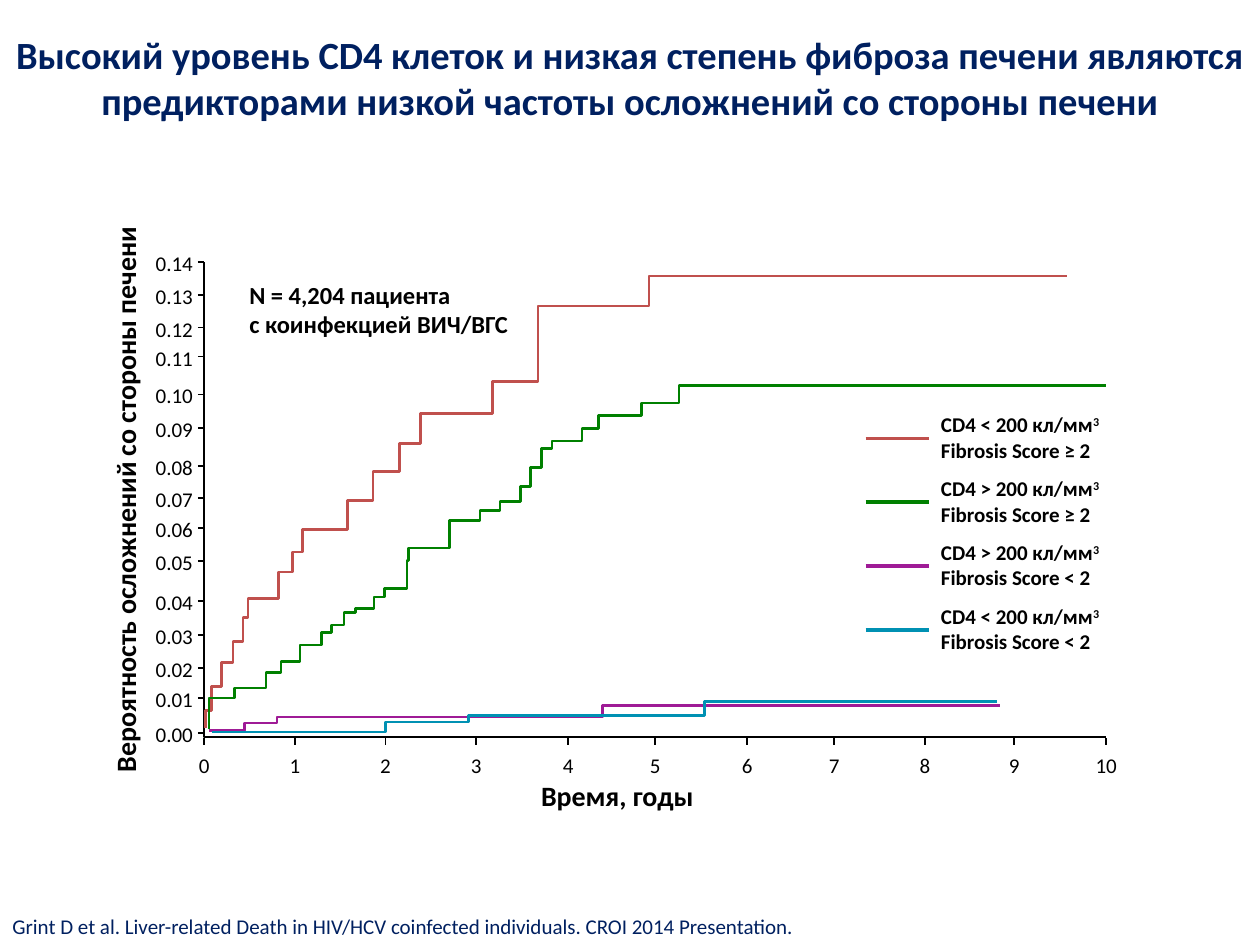
import pptx
import pptx.dml.color
import pptx.enum.shapes
import pptx.enum.text
import pptx.util
from lxml import etree
from pptx.oxml.ns import qn

Inches = pptx.util.Inches
ALIGN = pptx.enum.text.PP_ALIGN
ANCHOR = pptx.enum.text.MSO_ANCHOR
AUTO_SIZE = pptx.enum.text.MSO_AUTO_SIZE

COLORS = {
    "navy": "002060",
    "black": "000000",
    "red": "C0504D",
    "green": "008000",
    "purple": "9F1B96",
    "teal": "0091B3",
}

LEGEND = [
    ("red", "CD4 < 200 кл/мм", "Fibrosis Score ≥ 2"),
    ("green", "CD4 > 200 кл/мм", "Fibrosis Score ≥ 2"),
    ("purple", "CD4 > 200 кл/мм", "Fibrosis Score < 2"),
    ("teal", "CD4 < 200 кл/мм", "Fibrosis Score < 2"),
]

# Inches to the right of and above the axis origin
YEAR_TICKS = [0, 0.72, 1.44, 2.16, 2.89, 3.58, 4.31, 5, 5.72, 6.43, 7.16]
PROBABILITY_TICKS = [0.03, 0.31, 0.55, 0.81, 1.08, 1.4, 1.66, 1.9, 2.15,
                     2.45, 2.72, 3.02, 3.25, 3.51, 3.77]
CURVES = {
    "red": ((0.01, 0.07), [
        (0.01, 0.21), (0.06, 0.4), (0.14, 0.59), (0.23, 0.76), (0.31, 0.95),
        (0.35, 1.1), (0.59, 1.31), (0.7, 1.47), (0.78, 1.65), (1.14, 1.88),
        (1.34, 2.11), (1.55, 2.33), (1.72, 2.57), (2.29, 2.82), (2.65, 3.42),
        (3.53, 3.66)], 6.85),
    "green": ((0.04, 0.06), [
        (0.04, 0.31), (0.24, 0.39), (0.49, 0.51), (0.61, 0.6), (0.76, 0.73),
        (0.93, 0.83), (1.01, 0.89), (1.11, 0.99), (1.2, 1.02), (1.35, 1.11),
        (1.43, 1.18), (1.61, 1.4), (1.62, 1.5), (1.95, 1.72), (2.19, 1.8),
        (2.35, 1.87), (2.51, 1.99), (2.59, 2.14), (2.68, 2.29), (2.76, 2.35),
        (3, 2.45), (3.13, 2.55), (3.47, 2.65), (3.77, 2.79)], 7.16),
    "purple": ((0.04, 0.05), [(0.32, 0.11), (0.58, 0.16), (3.16, 0.25)], 6.32),
    "teal": ((0.06, 0.04), [(1.44, 0.12), (2.1, 0.17), (3.97, 0.28)], 6.29),
}


def rgb(color):
    return pptx.dml.color.RGBColor.from_string(COLORS[color])


def style(paragraph, size, color="black", bold=False, align=ALIGN.LEFT):
    paragraph.alignment = align
    paragraph.font.name = "Calibri"
    paragraph.font.size = pptx.util.Pt(size)
    paragraph.font.bold = bold
    paragraph.font.color.rgb = rgb(color)


def add_label(slide, box, lines, size, bold=False, align=ALIGN.LEFT):
    label = slide.shapes.add_textbox(*map(Inches, box))
    frame = label.text_frame
    frame.word_wrap = False
    frame.auto_size = AUTO_SIZE.SHAPE_TO_FIT_TEXT
    frame.text = "\n".join(lines)
    for paragraph in frame.paragraphs:
        style(paragraph, size, bold=bold, align=align)
    return label


def add_line(slide, start, end, color, width):
    line = slide.shapes.add_connector(
        pptx.enum.shapes.MSO_CONNECTOR.STRAIGHT, *map(Inches, start + end))
    line.line.color.rgb = rgb(color)
    line.line.width = pptx.util.Pt(width)
    etree.SubElement(line._element.spPr, qn("a:effectLst"))


def add_path(slide, points, color, width):
    corners = [(Inches(x), Inches(y)) for x, y in points]
    builder = slide.shapes.build_freeform(*corners[0])
    builder.add_line_segments(corners[1:], close=False)
    path = builder.convert_to_shape()
    path.fill.background()
    path.line.color.rgb = rgb(color)
    path.line.width = pptx.util.Pt(width)
    path.shadow.inherit = False


def add_title(slide, left, top, width, height):
    title = slide.shapes.title
    title.left, title.top = Inches(left), Inches(top)
    title.width, title.height = Inches(width), Inches(height)
    frame = title.text_frame
    frame.text = ("Высокий уровень CD4 клеток и низкая степень фиброза печени "
                  "являются предикторами низкой частоты осложнений "
                  "со стороны печени")
    frame.word_wrap = True
    frame.auto_size = AUTO_SIZE.NONE
    frame.vertical_anchor = ANCHOR.MIDDLE
    style(frame.paragraphs[0], 22, "navy", True, ALIGN.CENTER)


def add_citation(slide, left, top, width, height):
    citation = slide.shapes.add_textbox(*map(Inches, (left, top, width, height)))
    frame = citation.text_frame
    frame.word_wrap = True
    frame.vertical_anchor = ANCHOR.BOTTOM
    frame.text = ("Grint D et al. Liver-related Death in HIV/HCV coinfected "
                  "individuals. CROI 2014 Presentation.")
    style(frame.paragraphs[0], 12, "navy")


def add_legend(slide, left, top, width, height):
    row_height = height / len(LEGEND)
    key_width = 0.5
    for row, (color, cells, score) in enumerate(LEGEND):
        row_top = top + row * row_height
        key_y = row_top + 0.26
        add_line(slide, (left, key_y), (left + key_width, key_y), color, 2.25)
        entry = add_label(
            slide, (left + key_width, row_top, width - key_width, 0.5),
            [cells, score], 12, bold=True)
        exponent = entry.text_frame.paragraphs[0].add_run()
        exponent.text = "3"
        exponent._r.get_or_add_rPr().set("baseline", "30000")


def add_axes(slide, left, top, width, height):
    bottom = top + height
    add_path(slide, [(left, top), (left, bottom), (left + width, bottom)],
             "black", 1)
    for step, rise in enumerate(PROBABILITY_TICKS):
        y = bottom - rise
        add_line(slide, (left - 0.05, y), (left, y), "black", 1)
        add_label(slide, (left - 0.49, y - 0.14, 0.5, 0.3),
                  [f"{step / 100:.2f}"], 12, align=ALIGN.RIGHT)
    for year, run in enumerate(YEAR_TICKS):
        x = left + run
        label_width = 0.29 if year < 10 else 0.37
        add_line(slide, (x, bottom + 0.06), (x, bottom + 0.01), "black", 1)
        add_label(slide, (x - label_width / 2, bottom + 0.07, label_width, 0.3),
                  [str(year)], 12, align=ALIGN.CENTER)
    add_label(slide, (left + 2.57, bottom + 0.28, 1.42, 0.37),
              ["Время, годы"], 16, True, ALIGN.CENTER)
    probability = add_label(slide, (left - 2.92, top + 1.7, 4.59, 0.37),
                            ["Вероятность осложнений со стороны печени"],
                            16, True, ALIGN.CENTER)
    probability.rotation = 270


def add_curves(slide, left, top, width, height):
    bottom = top + height
    for color, (start, steps, end) in CURVES.items():
        corners = [start]
        for run, rise in steps:
            corners += [(run, corners[-1][1]), (run, rise)]
        corners.append((end, corners[-1][1]))
        add_path(slide, [(left + run, bottom - rise) for run, rise in corners],
                 color, 1.5)


def add_survival_plot(slide, left, top, width, height):
    add_axes(slide, left, top, width, height)
    add_curves(slide, left, top, width, height)
    add_label(slide, (left + 0.26, top + 0.09, 2.31, 0.57),
              ["N = 4,204 пациента", "с коинфекцией ВИЧ/ВГС"], 14, bold=True)


def main():
    deck = pptx.Presentation()
    deck.slide_width, deck.slide_height = Inches(10), Inches(7.5)
    slide = deck.slides.add_slide(deck.slide_layouts[5])
    add_title(slide, 0, -0.01, 10, 1.25)
    add_citation(slide, 0, 7, 9.41, 0.5)
    add_legend(slide, 6.87, 3.22, 2, 2.03)
    add_survival_plot(slide, 1.62, 2.08, 7.16, 3.77)
    deck.save("out.pptx")


if __name__ == "__main__":
    main()
